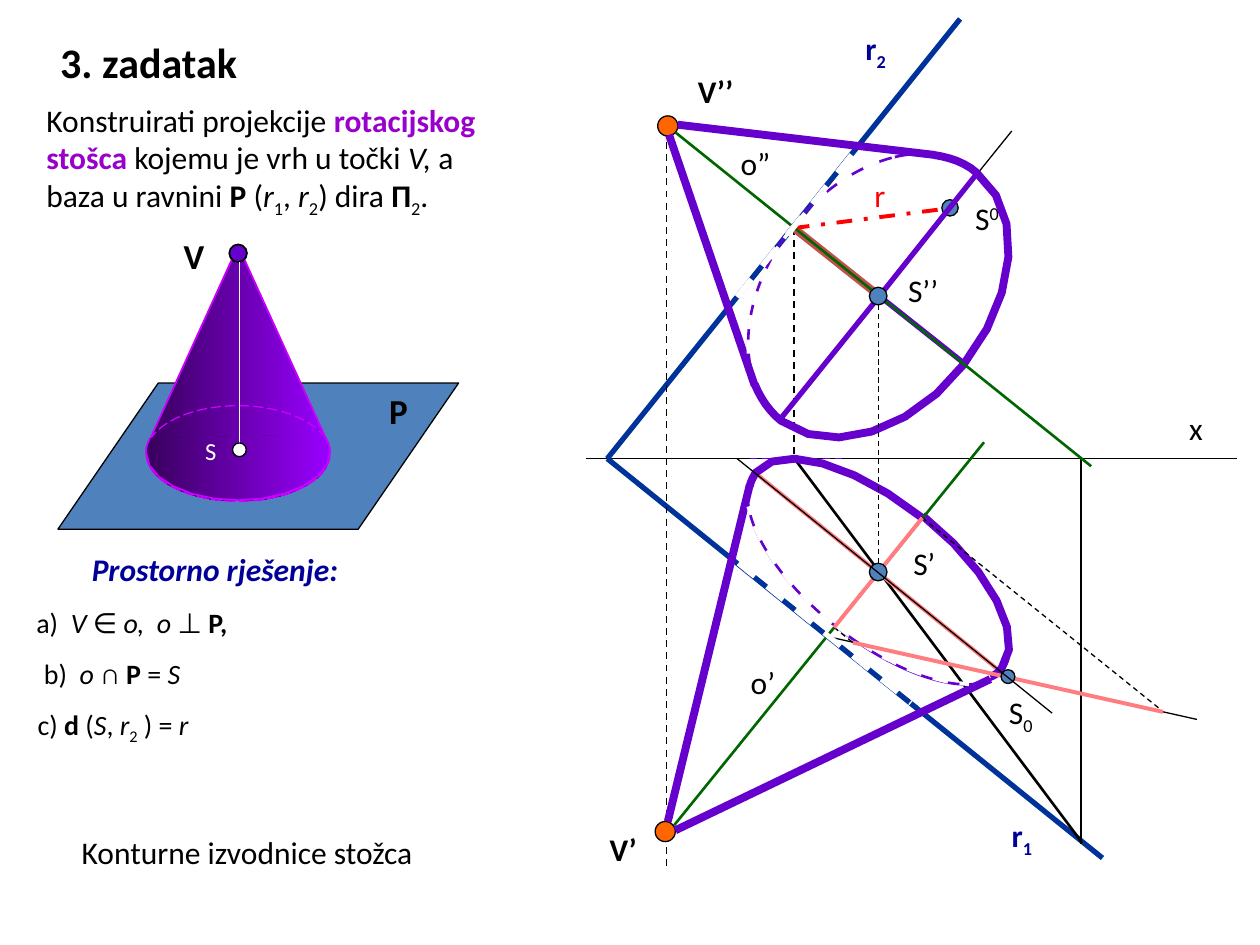
import math
import pptx
import pptx.util
import pptx.dml.color
import pptx.enum.dml
import pptx.enum.shapes
import pptx.oxml.ns
import lxml.etree

Inches = pptx.util.Inches
Pt = pptx.util.Pt
Dash = pptx.enum.dml.MSO_LINE
Kind = pptx.enum.shapes.MSO_SHAPE
BLACK, WHITE, PURPLE = "000000", "FFFFFF", "6600CC"
NAVY, GREEN, PINK, STEEL = "000099", "006600", "FF7C80", "4F81BD"
ORANGE, BLUE, RED, PLUM = "FF6600", "003399", "FF0000", "CC00FF"
SHADE = ("38005D", "9900FF")


def tint(code):
    return pptx.dml.color.RGBColor.from_string(code)


def write(frame, text, size=18, color=BLACK, accent="9900CC", wrap=True):
    frame.word_wrap = wrap
    para = frame.paragraphs[0]
    active, chunk = set(), ""

    def flush():
        if not chunk:
            return
        run = para.add_run()
        run.text = chunk
        run.font.name = "Calibri"
        run.font.size = Pt(size)
        run.font.bold = "*" in active
        run.font.italic = "/" in active
        run.font.color.rgb = tint(accent if "#" in active else color)
        for mark, shift in (("_", "-25000"), ("^", "30000")):
            if mark in active:
                run._r.get_or_add_rPr().set("baseline", shift)

    for char in text:
        if char in "*/_^#":
            flush()
            active ^= {char}
            chunk = ""
        else:
            chunk += char
    flush()


def trace(start, *curves, steps=6):
    points = [start]
    for a, b, c in curves:
        o = points[-1]
        for n in range(1, steps + 1):
            t = n / steps
            u = 1 - t
            points.append(tuple(
                u**3 * o[k] + 3 * u * u * t * a[k] + 3 * u * t * t * b[k] + t**3 * c[k]
                for k in (0, 1)))
    return points


def rotate(point, angle):
    cos, sin = math.cos(math.radians(angle)), math.sin(math.radians(angle))
    return point[0] * cos - point[1] * sin, point[0] * sin + point[1] * cos


def unturn(points, angle):
    flat = [rotate(point, -angle) for point in points]
    mid = [(min(axis) + max(axis)) / 2 for axis in zip(*flat)]
    real = rotate(mid, angle)
    return [(x + real[0] - mid[0], y + real[1] - mid[1]) for x, y in flat]


class Sketch:
    font_size = 18

    def __init__(self, slide):
        self.shapes = slide.shapes

    def stroke(self, item, color, width, dash=None):
        item.line.color.rgb = tint(color)
        item.line.width = Pt(width)
        if dash is not None:
            item.line.dash_style = dash

    def paint(self, item, fill):
        if fill is None:
            item.fill.background()
        elif isinstance(fill, tuple):
            item.fill.gradient()
            item.fill.gradient_angle = 0
            for stop, code in zip(item.fill.gradient_stops, fill):
                stop.color.rgb = tint(code)
        else:
            item.fill.solid()
            item.fill.fore_color.rgb = tint(fill)

    def line(self, x1, y1, x2, y2, color=BLACK, width=0.75, dash=None):
        item = self.shapes.add_connector(
            pptx.enum.shapes.MSO_CONNECTOR.STRAIGHT,
            Inches(x1), Inches(y1), Inches(x2), Inches(y2))
        self.stroke(item, color, width, dash)
        lxml.etree.SubElement(item._element.spPr, pptx.oxml.ns.qn("a:effectLst"))

    def form(self, kind, x, y, w, h, fill=None, color=BLACK, width=0.75,
             dash=None, turn=0, bend=None):
        item = self.shapes.add_shape(kind, Inches(x), Inches(y), Inches(w), Inches(h))
        item.shadow.inherit = False
        item.rotation = turn
        if bend is not None:
            item.adjustments[0] = bend
        self.paint(item, fill)
        self.stroke(item, color, width, dash)

    def dot(self, x, y, size=0.14, fill=STEEL, width=0.75):
        self.form(Kind.OVAL, x - size / 2, y - size / 2, size, size, fill, width=width)

    def curve(self, points, hub, turn=0, color=PURPLE, width=4.5, dash=None, fill=None):
        spots = [(Inches(x), Inches(y)) for x, y in unturn(points + [hub], turn)]
        maker = self.shapes.build_freeform(*spots[0])
        maker.add_line_segments(spots[1:-1], close=False)
        maker.move_to(*spots[-1])
        item = maker.convert_to_shape()
        item.shadow.inherit = False
        item.rotation = turn
        self.paint(item, fill)
        self.stroke(item, color, width, dash)

    def label(self, text, x, y, w=0.5, h=0.4, size=None, **style):
        box = self.shapes.add_textbox(Inches(x), Inches(y), Inches(w), Inches(h))
        write(box.text_frame, text, size=size or self.font_size, **style)


def draw_text(art):
    art.label("*3. zadatak*", 0.38, 0.24, 1.77, 0.5, size=24)
    art.label("Konstruirati projekcije *#rotacijskog stošca#* kojemu je vrh u točki "
              "/V, /a baza u ravnini *P *(/r/_1_, /r/_2_) dira *Π*_2_.", 0.27, 0.75, 3.8, 1)
    art.label("*/Prostorno rješenje:/*", 0.63, 4.32, 3.12, color=NAVY)
    art.label("a)  /V /∈ /o,  o /⊥ *P,*", 0.19, 4.76, 3.1, 0.37, size=16)
    art.label("b)  /o /∩ *P* = /S/", 0.25, 5.16, 1.31, 0.37, size=16, wrap=False)
    art.label("c) *d* (/S/, /r/_2_ ) = /r/", 0.2, 5.57, 1.72, 0.37, size=16)
    art.label("Konturne izvodnice stožca", 0.55, 6.56, 2.86, wrap=False)


def draw_cone(art):
    art.form(Kind.PARALLELOGRAM, 0.46, 3.04, 3.18, 1.16, STEEL, bend=0.687)
    art.label("*P*", 2.99, 3.04, 0.48, 0.43, size=20)
    art.form(Kind.ISOSCELES_TRIANGLE, 1.18, 1.95, 1.42, 1.56, SHADE, PLUM, 1)
    art.form(Kind.OVAL, 1.16, 3.22, 1.46, 0.76, SHADE, PLUM, 0.75, Dash.LONG_DASH)
    rim = trace((2.57, 3.45), ((2.6, 3.5), (2.62, 3.54), (2.62, 3.59)),
                ((2.62, 3.8), (2.29, 3.97), (1.89, 3.97)),
                ((1.49, 3.97), (1.16, 3.8), (1.16, 3.59)),
                ((1.16, 3.55), (1.17, 3.52), (1.19, 3.48)))
    art.curve(rim, (1.89, 3.59), color=PLUM, width=1, fill=SHADE)
    art.dot(1.89, 2.01, fill=PURPLE, width=1)
    art.label("*V*", 1.36, 1.81, 0.76, 0.43, size=20)
    art.line(1.9, 2.08, 1.9, 3.55, WHITE)
    art.dot(1.9, 3.57, 0.11, WHITE)
    art.label("S", 1.53, 3.41, 0.36, 0.33, size=14, color=WHITE)


def draw_planes(art):
    art.line(8.03, 1.04, 6.2, 3.31)
    art.line(4.65, 3.64, 9.82, 3.64, width=1)
    art.label("x", 9.34, 3.2, 0.44)
    art.line(7.62, 0.15, 4.82, 3.64, BLUE, 3)
    art.line(4.82, 3.64, 8.75, 6.81, BLUE, 3)
    art.line(5.29, 1.03, 5.29, 6.9, width=1, dash=Dash.DASH)
    art.label("*r_1_*", 7.93, 6.43, 0.45, color=NAVY)
    art.label("*r_2_*", 6.77, 0.18, 0.56, color=NAVY)
    art.dot(5.3, 1, 0.16, ORANGE)
    art.dot(5.28, 6.6, 0.16, ORANGE)
    art.label("*V’*", 4.74, 6.54)
    art.label("*V’’*", 5.44, 0.52, 0.66)
    art.line(8.58, 3.63, 8.58, 6.7, width=1)
    art.line(6.3, 1.81, 6.3, 3.64, width=1, dash=Dash.DASH)
    art.line(6.29, 3.62, 8.59, 6.69, width=1.5)


def draw_views(art):
    art.line(6.3, 1.81, 6.98, 2.35, "C0504D", 4.5)
    art.line(7.53, 1.65, 6.97, 2.35, width=1.5)
    art.dot(7.54, 1.65, 0.13)
    art.label("S^0^", 7.64, 1.53, 0.45)
    art.line(6.3, 1.81, 7.48, 1.66, RED, 2.25, Dash.DASH_DOT)
    art.label("r", 6.84, 1.35, 0.28, color=RED)
    for end in ((7.66, 2.89), (6.19, 3.33), (7.76, 1.37)):
        art.line(6.98, 2.35, *end, PURPLE, 3)
    art.form(Kind.OVAL, 6.1, 1.09, 1.74, 2.5, color=PURPLE, width=1.5, turn=38.2)
    art.line(5.95, 3.64, 6.68, 3.64, PURPLE, 1, Dash.DASH)
    art.line(5.99, 3.75, 7.94, 5.33, PINK, 2.25)
    art.line(7.92, 5.32, 7.99, 5.37)
    art.line(6.56, 5.05, 9.5, 5.71)
    art.form(Kind.OVAL, 5.72, 3.99, 2.51, 1.1, color=PURPLE, width=1.5, turn=38.5)
    for side in ((5.38, 0.99, 7.42, 1.23), (5.31, 1.07, 5.99, 3.06),
                 (5.3, 6.52, 5.95, 3.85), (5.36, 6.59, 7.86, 5.39)):
        art.line(*side, PURPLE, 4.5)
    for turn, hub, start, near, far in (
            (38.7, (6.97, 2.34), (7.41, 1.23), ((7.54, 1.25), (7.66, 1.29), (7.75, 1.37)),
             ((8.13, 1.67), (8.08, 2.35), (7.65, 2.89))),
            (37.4, (6.96, 2.35), (5.99, 3.05), ((6.04, 3.17), (6.11, 3.27), (6.2, 3.34)),
             ((6.59, 3.63), (7.24, 3.43), (7.66, 2.88))),
            (309.3, (6.97, 4.54), (5.95, 3.86), ((5.96, 3.82), (5.98, 3.78), (6, 3.75)),
             ((6.19, 3.51), (6.78, 3.68), (7.32, 4.11))),
            (128.3, (6.97, 4.53), (7.86, 5.37), ((7.9, 5.36), (7.93, 5.33), (7.95, 5.3)),
             ((8.14, 5.06), (7.86, 4.52), (7.32, 4.09)))):
        art.curve(trace(start, near, far), hub, turn)


def draw_axis(art):
    art.line(5.36, 1.05, 8.66, 3.7, GREEN, 1.5)
    art.line(5.35, 6.55, 7.81, 3.51, GREEN, 1.5)
    art.label("o’", 5.86, 5.21, 0.44)
    art.label("o”", 5.78, 1.09, 0.55)
    art.line(6.76, 1.23, 5.84, 2.37, WHITE, 3.25, Dash.DASH)
    art.line(5.86, 4.47, 7.23, 5.58, WHITE, 3, Dash.DASH)
    for width, turn, hub, start, *bow in (
            (2.5, 307.7, (7, 2.34), (6.3, 1.8), (6.51, 1.52), (6.81, 1.31), (7.1, 1.24)),
            (2, 309, (6.98, 2.35), (6.29, 1.8), (6.04, 2.11), (5.91, 2.49), (5.94, 2.81)),
            (2.25, 37.7, (6.97, 4.55), (6.64, 4.97), (7, 5.25), (7.41, 5.43), (7.69, 5.43)),
            (2.25, 40.4, (6.95, 4.54), (6.6, 4.95), (6.25, 4.65), (5.99, 4.3), (5.94, 4.02))):
        art.curve(trace(start, bow), hub, turn, WHITE, width, Dash.DASH)
    art.line(7.32, 4.11, 9.21, 5.63, dash=Dash.DASH)
    art.line(6.62, 4.98, 6.77, 5.1, dash=Dash.DASH)
    art.line(7.32, 4.11, 6.62, 4.98, PINK, 2.25)
    art.dot(6.97, 4.54)
    art.label("S’", 7.15, 4.27)
    art.line(6.77, 5.1, 9.23, 5.65, PINK, 2.25)
    art.dot(8, 5.37, 0.11)
    art.label("S_0_", 7.91, 5.45)
    art.line(6.97, 4.47, 6.97, 2.34, dash=Dash.DASH)
    art.dot(6.97, 2.35)
    art.label("S’’", 7.11, 2.1, 0.55)
    art.line(5.85, 3.64, 8.35, 5.66)


def main():
    deck = pptx.Presentation()
    deck.slide_width, deck.slide_height = Inches(10), Inches(7.5)
    art = Sketch(deck.slides.add_slide(deck.slide_layouts[6]))
    for draw in (draw_text, draw_planes, draw_views, draw_cone, draw_axis):
        draw(art)
    deck.save("out.pptx")


if __name__ == "__main__":
    main()
